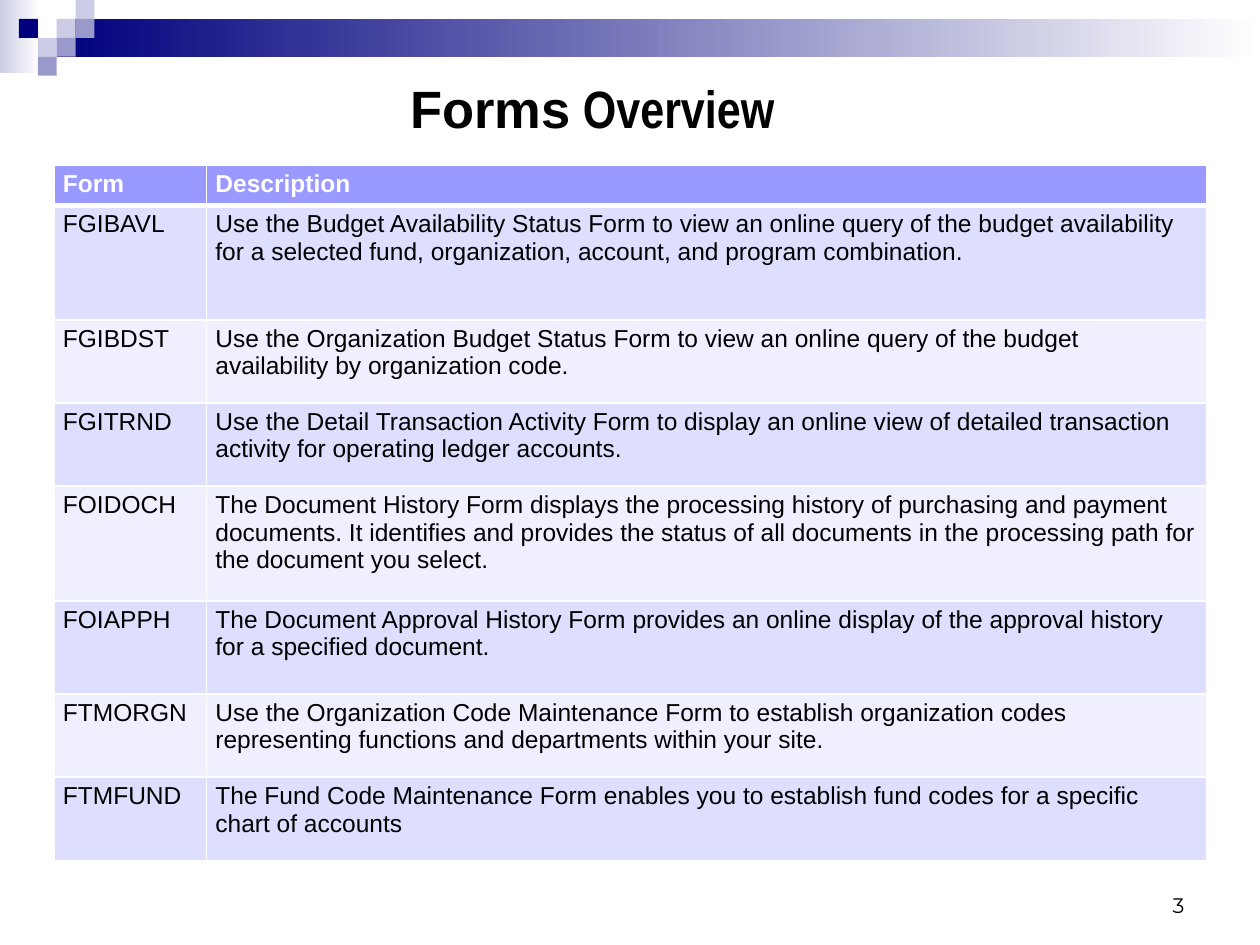
from lxml.etree import SubElement
from pptx import Presentation
from pptx.dml.color import RGBColor
from pptx.enum.shapes import MSO_SHAPE as SHAPE
from pptx.enum.text import MSO_ANCHOR as ANCHOR, PP_ALIGN as ALIGN
from pptx.oxml.ns import qn
from pptx.util import Inches, Pt

NAVY = RGBColor(0x00, 0x00, 0x7D)
MID = RGBColor(0x99, 0x99, 0xCC)
PALE = RGBColor(0xCC, 0xCC, 0xE6)
HEADER = RGBColor(0x99, 0x99, 0xFF)
BANDS = RGBColor(0xDE, 0xDE, 0xFF), RGBColor(0xEF, 0xEF, 0xFF)
WHITE = RGBColor(0xFF, 0xFF, 0xFF)
BLACK = RGBColor(0x00, 0x00, 0x00)

UNIT = 0.15
SQUARES = [(3, 1, PALE), (4, 0, PALE), (4, 1, MID), (2, 2, PALE),
           (1, 1, NAVY), (3, 2, MID), (2, 3, MID)]

COLS = [1.21, 7.94]
ROWS = [0.32, 0.91, 0.66, 0.66, 0.91, 0.74, 0.66, 0.66]
FORMS = [
    ("Form", "Description"),
    ("FGIBAVL", "Use the Budget Availability Status Form to view an online query of the budget "
                "availability for a selected fund, organization, account, and program combination."),
    ("FGIBDST", "Use the Organization Budget Status Form to view an online query of the budget "
                "availability by organization code."),
    ("FGITRND", "Use the Detail Transaction Activity Form to display an online view of detailed "
                "transaction activity for operating ledger accounts."),
    ("FOIDOCH", "The Document History Form displays the processing history of purchasing and payment "
                "documents. It identifies and provides the status of all documents in the processing "
                "path for the document you select."),
    ("FOIAPPH", "The Document Approval History Form provides an online display of the approval "
                "history for a specified document."),
    ("FTMORGN", "Use the Organization Code Maintenance Form to establish organization codes "
                "representing functions and departments within your site."),
    ("FTMFUND", "The Fund Code Maintenance Form enables you to establish fund codes for a specific "
                "chart of accounts"),
]

TITLE = {"name": "Arial", "size": Pt(30), "bold": True}
TITLE_NARROW = {**TITLE, "name": "Arial Narrow"}
CELL = {"name": "Arial", "size": Pt(14)}
NUMBER = {"name": "Montserrat", "size": Pt(12)}
CELL_BOX = {"margin_left": Inches(0.07), "margin_right": Inches(0.07),
            "margin_top": Inches(0.04), "margin_bottom": Inches(0.04)}


def apply(obj, values):
    """Set every attribute named in values on obj."""
    for name, value in values.items():
        setattr(obj, name, value)


def add_run(p, text, font, color=BLACK):
    """Append a formatted run to a paragraph."""
    r = p.add_run()
    r.text = text
    apply(r.font, font)
    r.font.color.rgb = color


def add_rect(s, box, *colors):
    """Draw a borderless rectangle, with a gradient when two colours are given."""
    sp = s.shapes.add_shape(SHAPE.RECTANGLE, *map(Inches, box))
    sp.shadow.inherit = False
    sp.line.fill.background()
    if len(colors) == 1:
        sp.fill.solid()
        sp.fill.fore_color.rgb = colors[0]
        return
    sp.fill.gradient()
    sp.fill.gradient_angle = 0
    for stop, color in zip(sp.fill.gradient_stops, colors):
        stop.color.rgb = color


def add_text(s, box, runs, frame, para):
    """Add a one-paragraph text box made of (text, font) runs."""
    tf = s.shapes.add_textbox(*map(Inches, box)).text_frame
    apply(tf, {"word_wrap": True, **frame})
    p = tf.paragraphs[0]
    apply(p, para)
    for text, font in runs:
        add_run(p, text, font)


def add_borders(cell, widths):
    """Give a cell white borders with a width in points for each side."""
    tc_pr = cell._tc.get_or_add_tcPr()
    for side, width in widths.items():
        ln = SubElement(tc_pr, qn(f"a:ln{side}"), w=str(Pt(width)))
        fill = SubElement(ln, qn("a:solidFill"))
        SubElement(fill, qn("a:srgbClr"), val=str(WHITE))


def add_form_table(s, left, top):
    """Build the banded table of forms."""
    size = map(Inches, (left, top, sum(COLS), sum(ROWS)))
    table = s.shapes.add_table(len(ROWS), len(COLS), *size).table
    for col, width in zip(table.columns, COLS):
        col.width = Inches(width)
    for i, (row, height, texts) in enumerate(zip(table.rows, ROWS, FORMS)):
        row.height = Inches(height)
        head = i == 0
        widths = {"L": 1, "R": 1, "T": 3 if i == 1 else 1, "B": 3 if head else 1}
        for cell, text in zip(row.cells, texts):
            apply(cell, CELL_BOX)
            add_borders(cell, widths)
            cell.fill.solid()
            cell.fill.fore_color.rgb = HEADER if head else BANDS[(i - 1) % 2]
            add_run(cell.text_frame.paragraphs[0], text, {**CELL, "bold": head},
                    WHITE if head else BLACK)


def add_banner(s):
    """Draw the gradient bars and the mosaic of squares at the top."""
    add_rect(s, (0, 0, 0.31, 0.58), PALE, WHITE)
    add_rect(s, (3 * UNIT, UNIT, 10 - 3 * UNIT, 2 * UNIT), NAVY, WHITE)
    for col, row, color in SQUARES:
        add_rect(s, (col * UNIT, row * UNIT, UNIT, UNIT), color)


def main():
    """Build the forms overview slide and save it."""
    prs = Presentation()
    apply(prs, {"slide_width": Inches(10), "slide_height": Inches(7.5)})
    s = prs.slides.add_slide(prs.slide_layouts[6])
    add_banner(s)
    add_text(s, (3.16, 0.58, 3.39, 0.39), [("Forms", TITLE), (" Overview", TITLE_NARROW)],
             {"margin_top": Inches(0.08)}, {"line_spacing": 0.9})
    add_form_table(s, 0.43, 1.31)
    add_text(s, (7.17, 6.83, 2.33, 0.5), [("3", NUMBER)],
             {"vertical_anchor": ANCHOR.BOTTOM}, {"alignment": ALIGN.RIGHT})
    prs.save("out.pptx")


if __name__ == "__main__":
    main()
